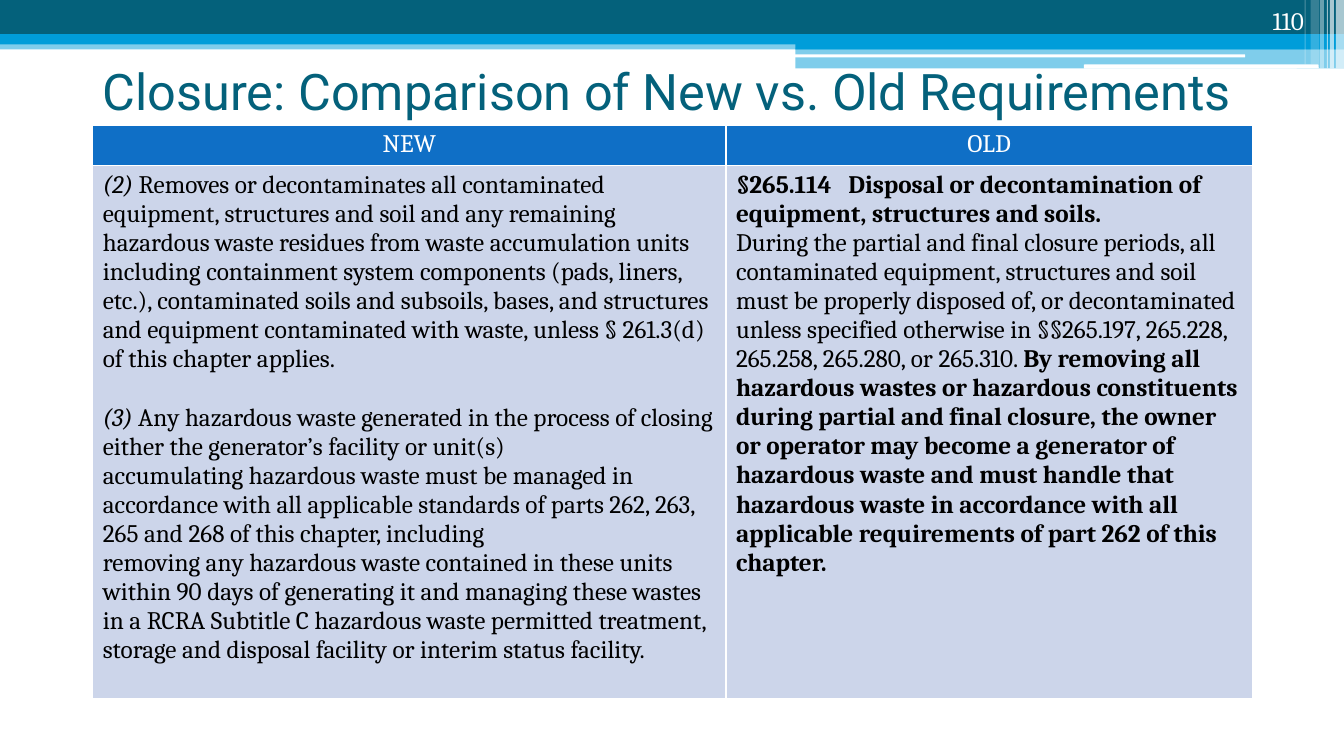
from lxml.etree import SubElement
from pptx import Presentation
from pptx.dml.color import RGBColor
from pptx.enum.shapes import MSO_SHAPE
from pptx.enum.text import MSO_ANCHOR, PP_ALIGN
from pptx.oxml.ns import qn
from pptx.util import Pt

PX = 9144  # EMU per px, 100 px to the inch
COLORS = {
    "teal": "04617B",
    "sky": "009DD9",
    "blue": "0F6FC6",
    "pale": "CCD5EA",
    "white": "FFFFFF",
    "black": "000000",
}

# left, top, width, height, colour, opacity in percent
BANDS = [
    (0, 40, 1333, 9, "sky", 50),
    (0, 0, 1333, 34, "teal", 100),
    (0, 34, 1333, 10, "sky", 100),
    (789, 39, 544, 10, "sky", 100),
    (789, 48, 544, 20, "sky", 50),
]
GROOVES = [(788, 54, 447, 3, "white", 100), (1075, 64, 233, 4, "white", 100)]
# left, width, height, opacity in percent
STRIPES = [
    (1325, 8, 68, 65), (1319, 4, 68, 65), (1316, 1, 68, 60),
    (1309, 4, 68, 40), (1300, 8, 64, 20), (1294, 1, 64, 30),
]

# Each paragraph is a list of (text, style) runs
NEW_RULES = [
    [("(2) ", "italic"),
     ("Removes or decontaminates all contaminated equipment, structures and soil and any "
      "remaining hazardous waste residues from waste accumulation units including containment "
      "system components (pads, liners, etc.), contaminated soils and subsoils, bases, and "
      "structures and equipment contaminated with waste, unless § 261.3(d) of this chapter "
      "applies.", "")],
    [("(3) ", "italic"),
     ("Any hazardous waste generated in the process of closing either the generator’s "
      "facility or unit(s)", "")],
    [("accumulating hazardous waste must be managed in accordance with all applicable "
      "standards of parts 262, 263, 265 and 268 of this chapter, including", "")],
    [("removing any hazardous waste contained in these units within 90 days of generating it "
      "and managing these wastes in a RCRA Subtitle C hazardous waste permitted treatment, "
      "storage and disposal facility or interim status facility.", "")],
]
OLD_RULES = [
    [("§265.114   Disposal or decontamination of equipment, structures and soils.", "bold")],
    [("During the partial and final closure periods, all contaminated equipment, structures "
      "and soil must be properly disposed of, or decontaminated unless specified otherwise in "
      "§§265.197, 265.228, 265.258, 265.280, or 265.310. ", ""),
     ("By removing all hazardous wastes or hazardous constituents during partial and final "
      "closure, the owner or operator may become a generator of hazardous waste and must "
      "handle that hazardous waste in accordance with all applicable requirements of part 262 "
      "of this chapter.", "bold")],
]


def rgb(name):
    return RGBColor.from_string(COLORS[name])


def place(shape, box):
    shape.left, shape.top, shape.width, shape.height = (n * PX for n in box)


def style_font(font, size, color, name="Cambria", style=""):
    font.name, font.size = name, Pt(size)
    font.color.rgb = rgb(color)
    font.bold, font.italic = style == "bold", style == "italic"


def add_bar(slide, box, color, opacity, kind=MSO_SHAPE.RECTANGLE):
    bar = slide.shapes.add_shape(kind, *(n * PX for n in box))
    bar.shadow.inherit = False
    bar.line.fill.background()
    bar.fill.solid()
    bar.fill.fore_color.rgb = rgb(color)
    if opacity < 100:
        srgb = bar.fill._xPr.find(f".//{qn('a:srgbClr')}")
        SubElement(srgb, qn("a:alpha"), val=str(opacity * 1000))


def add_banner(slide):
    for *box, color, opacity in BANDS:
        add_bar(slide, box, color, opacity)
    for *box, color, opacity in GROOVES:
        add_bar(slide, box, color, opacity, MSO_SHAPE.ROUNDED_RECTANGLE)
    for left, width, height, opacity in STRIPES:
        add_bar(slide, (left, 0, width, height), "white", opacity)


def add_title(slide, box, wording):
    title = slide.shapes.title
    place(title, box)
    frame = title.text_frame
    frame.text = wording
    frame.word_wrap = True
    frame.vertical_anchor = MSO_ANCHOR.MIDDLE
    frame.paragraphs[0].alignment = PP_ALIGN.LEFT
    style_font(frame.paragraphs[0].runs[0].font, 36, "teal", "Roboto")


def add_page_number(slide, box, number):
    frame = slide.shapes.add_textbox(*(n * PX for n in box)).text_frame
    frame.text = number
    frame.word_wrap = True
    frame.vertical_anchor = MSO_ANCHOR.BOTTOM
    frame.paragraphs[0].alignment = PP_ALIGN.RIGHT
    style_font(frame.paragraphs[0].runs[0].font, 18, "white")


def paint_cell(cell, color):
    properties = cell._tc.get_or_add_tcPr()
    for side in ("lnL", "lnR", "lnT", "lnB"):
        border = SubElement(properties, qn(f"a:{side}"), w=str(Pt(1)))
        fill = SubElement(border, qn("a:solidFill"))
        SubElement(fill, qn("a:srgbClr"), val=COLORS["white"])
    cell.fill.solid()
    cell.fill.fore_color.rgb = rgb(color)


def fill_rules(cell, rules):
    frame = cell.text_frame
    for index, runs in enumerate(rules):
        paragraph = frame.add_paragraph() if index else frame.paragraphs[0]
        # A numbered item after the first stands one line apart
        if index and runs[0][1] == "italic":
            paragraph.space_before = Pt(21)
        for wording, style in runs:
            run = paragraph.add_run()
            run.text = wording
            style_font(run.font, 18, "black", style=style)


def add_comparison(slide, box, header_height, new_width):
    left, top, width, height = box
    table = slide.shapes.add_table(2, 2, *(n * PX for n in box)).table
    table.horz_banding = False
    table.rows[0].height = header_height * PX
    table.rows[1].height = (height - header_height) * PX
    table.columns[0].width = new_width * PX
    table.columns[1].width = (width - new_width) * PX
    for column, (heading, rules) in enumerate([("NEW", NEW_RULES), ("OLD", OLD_RULES)]):
        header, body = table.cell(0, column), table.cell(1, column)
        paint_cell(header, "blue")
        paint_cell(body, "pale")
        header.text_frame.text = heading
        label = header.text_frame.paragraphs[0]
        label.alignment = PP_ALIGN.CENTER
        style_font(label.runs[0].font, 18, "white")
        fill_rules(body, rules)


def main():
    deck = Presentation()
    deck.slide_width, deck.slide_height = 1333 * PX, 750 * PX
    slide = deck.slides.add_slide(deck.slide_layouts[5])  # Title Only
    add_banner(slide)
    add_title(slide, (92, 40, 1150, 99), "Closure: Comparison of New vs. Old Requirements")
    add_comparison(slide, (92, 124, 1150, 569), header_height=40, new_width=628)
    add_page_number(slide, (1192, 0, 111, 40), "110")
    deck.save("out.pptx")


if __name__ == "__main__":
    main()
